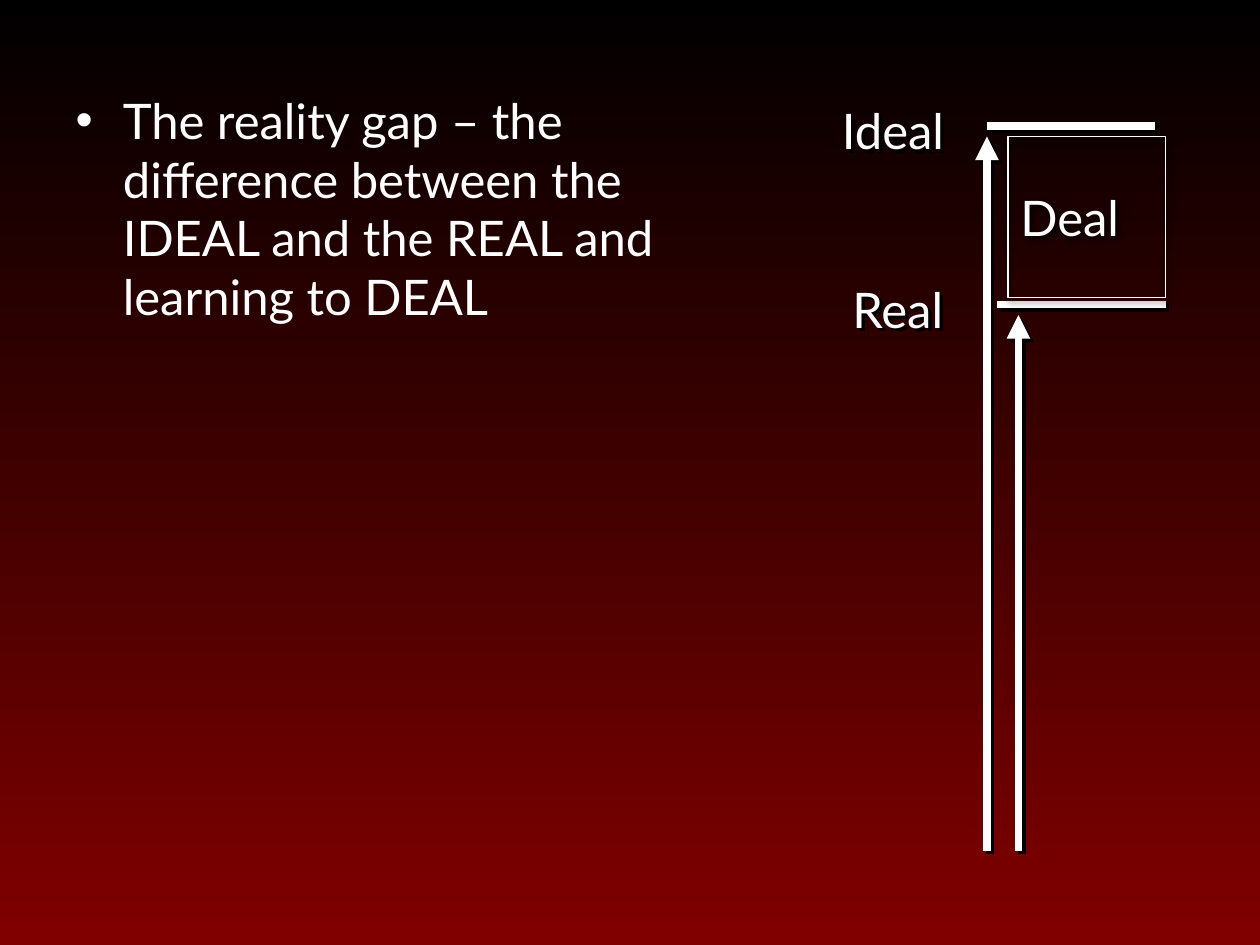
from dataclasses import dataclass

from lxml.etree import SubElement
from pptx import Presentation
from pptx.dml.color import RGBColor
from pptx.enum.shapes import MSO_CONNECTOR, MSO_SHAPE
from pptx.enum.text import MSO_ANCHOR, MSO_AUTO_SIZE, PP_ALIGN
from pptx.oxml.ns import qn
from pptx.slide import Slide
from pptx.util import Emu, Pt


@dataclass(frozen=True)
class Theme:
    white: RGBColor = RGBColor(0xFF, 0xFF, 0xFF)
    black: RGBColor = RGBColor(0x00, 0x00, 0x00)
    dark_red: RGBColor = RGBColor(0x80, 0x00, 0x00)
    font: str = "Lato"
    text_size: float = 28
    bar_width: float = 4.5
    frame_width: float = 0.75


@dataclass(frozen=True)
class Shadow:
    blur: float
    distance: float
    angle: int
    opacity: int = 100


@dataclass(frozen=True)
class Box:
    left: int
    top: int
    width: int
    height: int


@dataclass(frozen=True)
class Label:
    text: str
    box: Box


@dataclass(frozen=True)
class Bar:
    start: tuple[int, int]
    end: tuple[int, int]
    has_arrow: bool = False


THEME = Theme()
HARD_SHADOW = Shadow(blur=0, distance=2.8, angle=45)
SOFT_SHADOW = Shadow(blur=4, distance=2, angle=50)

BASE = 648
BARS = [
    Bar((752, BASE), (752, 104), has_arrow=True),
    Bar((752, 96), (880, 96)),
    Bar((760, 232), (888, 232)),
    Bar((776, BASE), (776, 240), has_arrow=True),
]
LABELS = [
    Label("Ideal", Box(632, 72, 112, 56)),
    Label("Real", Box(640, 208, 112, 56)),
]
DEAL = Label("Deal", Box(768, 104, 120, 123))
MESSAGE = Label(
    "The reality gap – the difference between the IDEAL and the REAL and learning to DEAL",
    Box(48, 64, 464, 608),
)
BULLET_INDENT = 36


def px(value: int) -> Emu:
    """Convert px to EMU at 96 px to the inch."""
    return Emu(value * 9525)


def place(box: Box) -> tuple[Emu, Emu, Emu, Emu]:
    return px(box.left), px(box.top), px(box.width), px(box.height)


def add_shadow(shape, shadow: Shadow) -> None:
    effects = SubElement(shape._element.spPr, qn("a:effectLst"))
    outer = SubElement(
        effects,
        qn("a:outerShdw"),
        blurRad=str(Pt(shadow.blur)),
        dist=str(Pt(shadow.distance)),
        dir=str(shadow.angle * 60000),
        algn="ctr",
        rotWithShape="0",
    )
    color = SubElement(outer, qn("a:srgbClr"), val=str(THEME.black))
    SubElement(color, qn("a:alpha"), val=str(shadow.opacity * 1000))


def write_text(shape, text: str, anchor: MSO_ANCHOR = MSO_ANCHOR.TOP) -> None:
    frame = shape.text_frame
    frame.text = text
    frame.word_wrap = True
    frame.auto_size = MSO_AUTO_SIZE.NONE
    frame.vertical_anchor = anchor
    paragraph = frame.paragraphs[0]
    paragraph.alignment = PP_ALIGN.LEFT
    paragraph.space_before = Pt(0)
    for run in paragraph.runs:
        run.font.name = THEME.font
        run.font.size = Pt(THEME.text_size)
        run.font.color.rgb = THEME.white


def add_bar(slide: Slide, bar: Bar) -> None:
    connector = slide.shapes.add_connector(
        MSO_CONNECTOR.STRAIGHT, *map(px, bar.start + bar.end)
    )
    connector.line.color.rgb = THEME.white
    connector.line.width = Pt(THEME.bar_width)
    if bar.has_arrow:
        SubElement(connector.line._get_or_add_ln(), qn("a:tailEnd"), type="triangle")
    add_shadow(connector, HARD_SHADOW)


def add_label(slide: Slide, label: Label) -> None:
    text_box = slide.shapes.add_textbox(*place(label.box))
    write_text(text_box, label.text)
    add_shadow(text_box, HARD_SHADOW)


def add_frame(slide: Slide, label: Label) -> None:
    frame = slide.shapes.add_shape(MSO_SHAPE.RECTANGLE, *place(label.box))
    frame.fill.background()
    frame.line.color.rgb = THEME.white
    frame.line.width = Pt(THEME.frame_width)
    write_text(frame, label.text, MSO_ANCHOR.MIDDLE)
    add_shadow(frame, SOFT_SHADOW)


def fill_body(slide: Slide, label: Label) -> None:
    body = slide.placeholders[1]
    body.left, body.top, body.width, body.height = place(label.box)
    write_text(body, label.text)
    properties = body.text_frame.paragraphs[0]._p.get_or_add_pPr()
    properties.set("marL", str(px(BULLET_INDENT)))
    properties.set("indent", str(px(-BULLET_INDENT)))
    SubElement(properties, qn("a:buFont"), typeface="Arial")
    SubElement(properties, qn("a:buChar"), char="•")


def paint_background(slide: Slide) -> None:
    fill = slide.background.fill
    fill.gradient()
    fill.gradient_angle = 90
    for stop, color in zip(fill.gradient_stops, (THEME.dark_red, THEME.black)):
        stop.color.rgb = color


def main() -> None:
    presentation = Presentation()
    presentation.slide_width, presentation.slide_height = px(960), px(720)
    slide = presentation.slides.add_slide(presentation.slide_layouts[1])
    title = slide.shapes.title._element
    title.getparent().remove(title)

    paint_background(slide)
    fill_body(slide, MESSAGE)
    for bar in BARS:
        add_bar(slide, bar)
    for label in LABELS:
        add_label(slide, label)
    add_frame(slide, DEAL)
    presentation.save("out.pptx")


if __name__ == "__main__":
    main()
